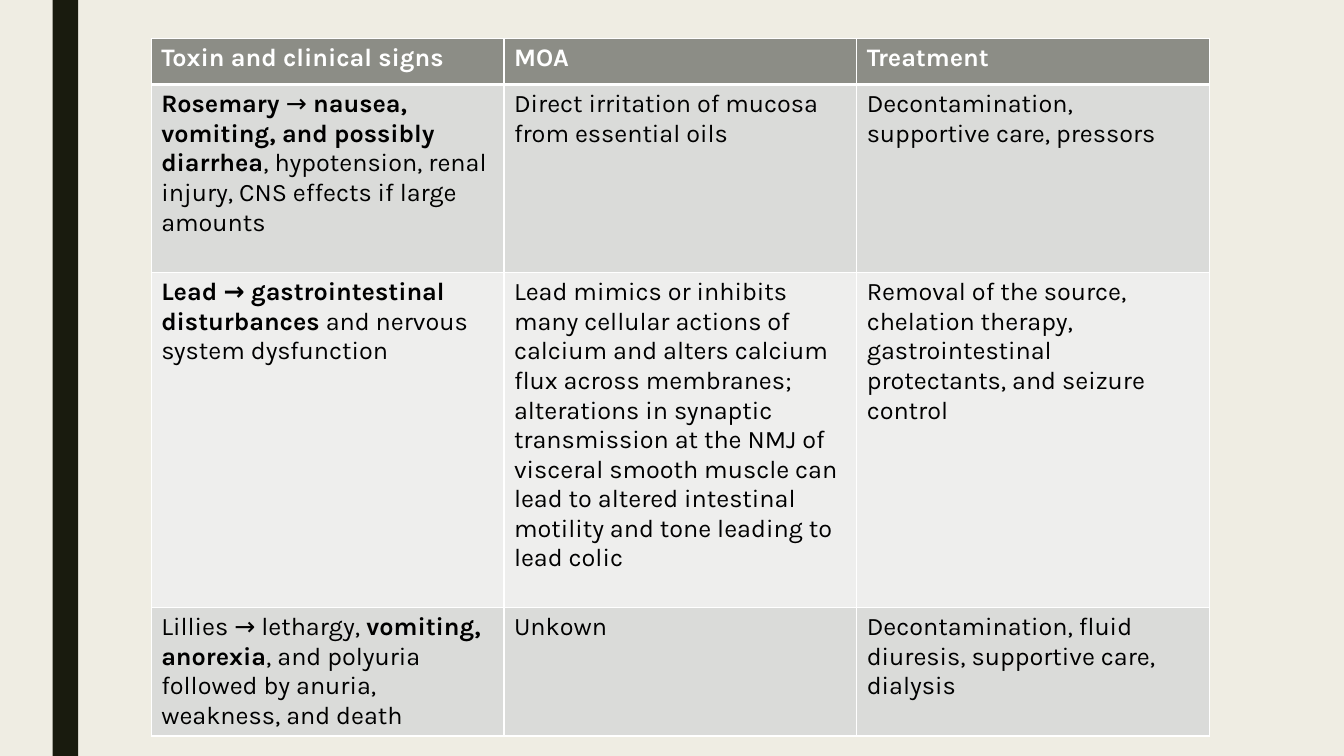
"""Build a slide with a table of toxins, their action and treatment."""
from lxml import etree
from pptx import Presentation
from pptx.dml.color import RGBColor
from pptx.enum.shapes import MSO_SHAPE
from pptx.oxml.ns import qn
from pptx.util import Cm, Pt

RECT = MSO_SHAPE.RECTANGLE
CREAM = RGBColor(0xEF, 0xED, 0xE3)
DARK = RGBColor(0x19, 0x1B, 0x0E)
GREY = RGBColor(0x8C, 0x8D, 0x86)
BAND = RGBColor(0xDA, 0xDB, 0xD9)
PALE = RGBColor(0xEE, 0xEE, 0xED)
WHITE = RGBColor(0xFF, 0xFF, 0xFF)
BLACK = RGBColor(0x00, 0x00, 0x00)

FONT = {"name": "Karla", "size": Pt(18)}
WIDTH = Cm(8.89)
HEIGHTS = [Cm(1.17), Cm(4.74), Cm(8.44), Cm(3.23)]
ROWS = [
    ["*Toxin and clinical signs*", "*MOA*", "*Treatment*"],
    [
        "*Rosemary *→ *nausea, vomiting, and possibly diarrhea*, "
        "hypotension, renal injury, CNS effects if large amounts",
        "Direct irritation of mucosa from essential oils",
        "Decontamination, supportive care, pressors",
    ],
    [
        "*Lead → gastrointestinal disturbances* and nervous system dysfunction",
        "Lead mimics or inhibits many cellular actions of calcium and alters "
        "calcium flux across membranes; alterations in synaptic transmission "
        "at the NMJ of visceral smooth muscle can lead to altered intestinal "
        "motility and tone leading to lead colic",
        "Removal of the source, chelation therapy, gastrointestinal\n"
        "protectants, and seizure control",
    ],
    [
        "Lillies → lethargy, *vomiting, anorexia*, and polyuria followed by "
        "anuria, weakness, and death",
        "Unkown",
        "Decontamination, fluid diuresis, supportive care, dialysis",
    ],
]


def add_bar(slide):
    """Draw the dark bar down the left side."""
    bar = slide.shapes.add_shape(RECT, Cm(1.33), 0, Cm(0.64), Cm(19.05))
    bar.shadow.inherit = False
    bar.fill.solid()
    bar.fill.fore_color.rgb = DARK
    bar.line.fill.background()


def set_text(cell, text, color):
    """Write the text, with the parts between asterisks in bold."""
    for i, line in enumerate(text.split("\n")):
        frame = cell.text_frame
        para = frame.add_paragraph() if i else frame.paragraphs[0]
        for j, part in enumerate(line.split("*")):
            if not part:
                continue
            run = para.add_run()
            run.text = part
            for key, value in {**FONT, "bold": j % 2 == 1}.items():
                setattr(run.font, key, value)
            run.font.color.rgb = color


def set_edges(cell, edges):
    """Give each named side a white line of the given points."""
    props = cell._tc.get_or_add_tcPr()
    for side, width in edges.items():
        line = etree.SubElement(props, qn("a:ln" + side), w=str(Pt(width)))
        fill = etree.SubElement(line, qn("a:solidFill"))
        etree.SubElement(fill, qn("a:srgbClr"), val=str(WHITE))


def add_grid(slide):
    """Add the table and format its cells."""
    count = len(ROWS[0])
    frame = slide.shapes.add_table(
        len(ROWS), count, Cm(3.81), Cm(0.96), WIDTH * count, sum(HEIGHTS))
    grid = frame.table
    for col in grid.columns:
        col.width = WIDTH
    for i, (texts, height) in enumerate(zip(ROWS, HEIGHTS)):
        grid.rows[i].height = height
        shade = GREY if i == 0 else BAND if i % 2 else PALE
        edges = {"L": 1, "R": 1, "T": 3 if i == 1 else 1, "B": 1 if i else 3}
        for j, text in enumerate(texts):
            cell = grid.cell(i, j)
            set_text(cell, text, BLACK if i else WHITE)
            set_edges(cell, edges)
            cell.fill.solid()
            cell.fill.fore_color.rgb = shade


def main():
    """Build and save the slide."""
    deck = Presentation()
    deck.slide_width, deck.slide_height = Cm(33.87), Cm(19.05)
    slide = deck.slides.add_slide(deck.slide_layouts[6])
    slide.background.fill.solid()
    slide.background.fill.fore_color.rgb = CREAM
    add_bar(slide)
    add_grid(slide)
    deck.save("out.pptx")


if __name__ == "__main__":
    main()
